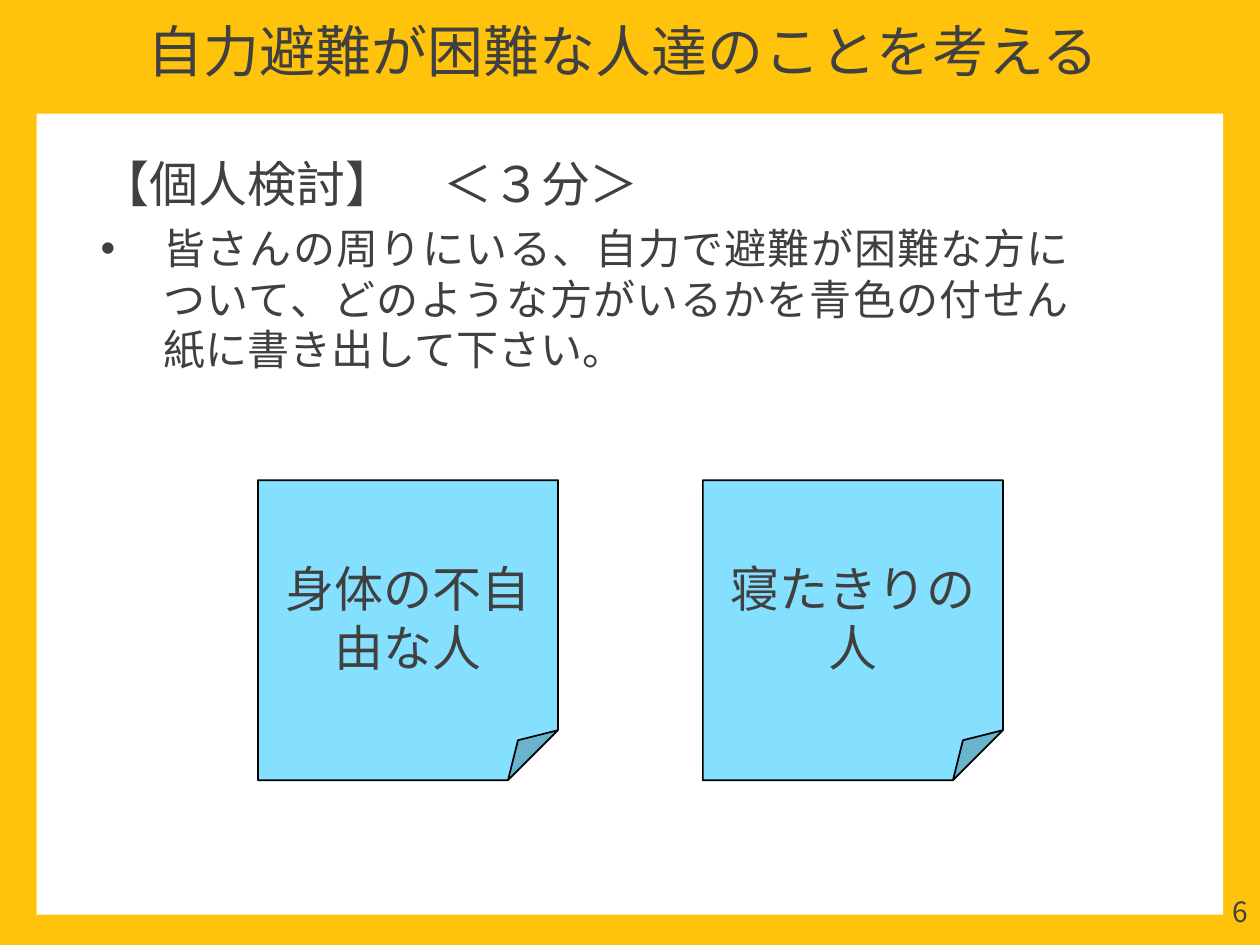
from lxml.etree import SubElement
from pptx import Presentation
from pptx.dml.color import RGBColor
from pptx.enum.shapes import MSO_SHAPE
from pptx.enum.text import MSO_ANCHOR, PP_ALIGN
from pptx.oxml.ns import qn
from pptx.util import Cm, Pt

FONT = "Noto Sans CJK JP"
YELLOW = RGBColor(0xFF, 0xC3, 0x0C)
WHITE = RGBColor(0xFF, 0xFF, 0xFF)
NOTE_BLUE = RGBColor(0x85, 0xE0, 0xFF)
BLACK = RGBColor(0x00, 0x00, 0x00)
TEXT_GREY = RGBColor(0x40, 0x40, 0x40)

SLIDE_WIDTH, SLIDE_HEIGHT = Cm(25.4), Cm(19.05)
NOTE_SIZE = Cm(6.05)
NOTE_LEFT, NOTE_TOP, NOTE_STEP = Cm(5.2), Cm(9.68), Cm(8.97)
NOTES = ["身体の不自由な人", "寝たきりの人"]


def add_panel(slide, preset, left, top, width, height, fill=None):
    panel = slide.shapes.add_shape(preset, left, top, width, height)
    panel.shadow.inherit = False
    panel.line.fill.background()
    if fill is None:
        panel.fill.background()
    else:
        panel.fill.solid()
        panel.fill.fore_color.rgb = fill
    return panel


def set_frame(frame, top, bottom, anchor):
    frame.word_wrap = True
    frame.margin_left = frame.margin_right = Cm(0.25)
    frame.margin_top, frame.margin_bottom = top, bottom
    frame.vertical_anchor = anchor


def write(paragraph, text, size, align):
    paragraph.text = text
    paragraph.alignment = align
    for run in paragraph.runs:
        run.font.size = Pt(size)
        run.font.name = FONT
        run.font.color.rgb = TEXT_GREY
        # East Asian characters take their own typeface
        SubElement(run.font._element, qn("a:ea"), typeface=FONT)


def add_label(slide, text, left, top, width, height, size, align):
    label = slide.shapes.add_textbox(left, top, width, height)
    set_frame(label.text_frame, 0, 0, MSO_ANCHOR.TOP)
    write(label.text_frame.paragraphs[0], text, size, align)
    return label


def add_bullet(paragraph, indent):
    properties = paragraph._p.get_or_add_pPr()
    properties.set("marL", str(indent))
    properties.set("indent", str(-indent))
    SubElement(properties, qn("a:buFont"), typeface="Arial")
    SubElement(properties, qn("a:buChar"), char="•")


def add_instructions(slide):
    instructions = add_panel(slide, MSO_SHAPE.ROUNDED_RECTANGLE,
                             Cm(1.78), Cm(2.29), Cm(20.02), Cm(6.15))
    instructions.adjustments[0] = 0
    frame = instructions.text_frame
    set_frame(frame, Cm(0.1), Cm(0.2), MSO_ANCHOR.MIDDLE)
    heading = frame.paragraphs[0]
    write(heading, "【個人検討】　＜３分＞", 28, PP_ALIGN.JUSTIFY)
    heading.space_after = Pt(6)
    task = frame.add_paragraph()
    write(task, "皆さんの周りにいる、自力で避難が困難な方について、"
          "どのような方がいるかを青色の付せん紙に書き出して下さい。",
          24, PP_ALIGN.JUSTIFY)
    add_bullet(task, Cm(1.27))


def add_sticky_note(slide, text, left):
    note = add_panel(slide, MSO_SHAPE.FOLDED_CORNER, left, NOTE_TOP,
                     NOTE_SIZE, NOTE_SIZE, NOTE_BLUE)
    note.line.color.rgb = BLACK
    note.line.width = Pt(1)
    set_frame(note.text_frame, Cm(0.61), Cm(0.13), MSO_ANCHOR.MIDDLE)
    write(note.text_frame.paragraphs[0], text, 28, PP_ALIGN.CENTER)


def main():
    deck = Presentation()
    deck.slide_width, deck.slide_height = SLIDE_WIDTH, SLIDE_HEIGHT
    slide = deck.slides.add_slide(deck.slide_layouts[6])

    # Yellow frame around a white page
    add_panel(slide, MSO_SHAPE.RECTANGLE, 0, 0, SLIDE_WIDTH, SLIDE_HEIGHT, YELLOW)
    add_panel(slide, MSO_SHAPE.RECTANGLE,
              Cm(0.74), Cm(2.29), Cm(23.92), Cm(16.15), WHITE)

    # Page number and title
    add_label(slide, "6", Cm(19.69), Cm(18.03), Cm(5.71), Cm(1.02),
              16, PP_ALIGN.RIGHT)
    title = add_label(slide, "自力避難が困難な人達のことを考える",
                      Cm(0.38), Cm(0.48), Cm(24.38), Cm(1.8),
                      32, PP_ALIGN.CENTER)
    title.text_frame.paragraphs[0].line_spacing = 0.9

    # Task and example sticky notes
    add_instructions(slide)
    for position, text in enumerate(NOTES):
        add_sticky_note(slide, text, NOTE_LEFT + position * NOTE_STEP)

    deck.save("out.pptx")


if __name__ == "__main__":
    main()
